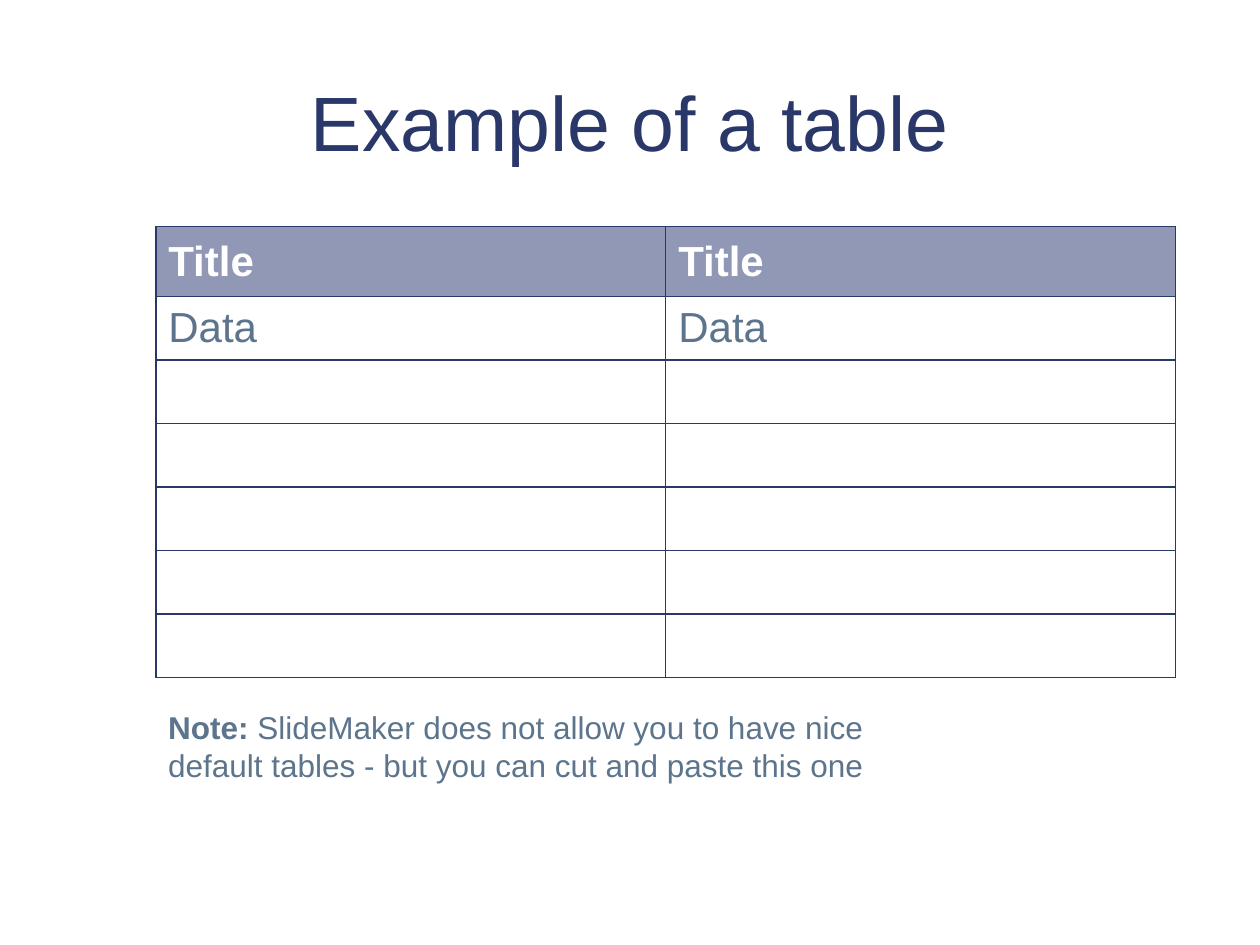
from pptx import Presentation
from pptx.dml.color import RGBColor
from pptx.enum.shapes import MSO_SHAPE
from pptx.enum.text import MSO_ANCHOR, MSO_AUTO_SIZE, PP_ALIGN
from pptx.oxml.ns import qn
from pptx.util import Cm, Pt
from lxml.etree import SubElement

NAVY = RGBColor(0x2A, 0x37, 0x69)
LAVENDER = RGBColor(0x91, 0x98, 0xB5)
SLATE = RGBColor(0x5C, 0x74, 0x8C)
WHITE = RGBColor(0xFF, 0xFF, 0xFF)

ROWS = [["Title", "Title"], ["Data", "Data"]] + [["", ""]] * 5
HEADER_HEIGHT = Cm(1.41)
ROW_HEIGHT = Cm(1.28)
COLUMN_WIDTH = Cm(10.28)
TABLE_LEFT = Cm(3.14)


def format_font(font, size, color, bold=False):
    font.name = "Arial"
    font.size = Pt(size)
    font.bold = bold
    font.color.rgb = color


def add_title(slide, text):
    title = slide.shapes.title
    title.left, title.top, title.width, title.height = Cm(1.27), Cm(0.84), Cm(22.86), Cm(3.18)
    title.text_frame.text = text
    title.text_frame.vertical_anchor = MSO_ANCHOR.MIDDLE
    heading = title.text_frame.paragraphs[0]
    heading.alignment = PP_ALIGN.CENTER
    format_font(heading.runs[0].font, 44, NAVY)


def add_borders(cell):
    properties = cell._tc.get_or_add_tcPr()
    for side in ("lnL", "lnR", "lnT", "lnB"):
        border = SubElement(properties, qn(f"a:{side}"), w=str(Pt(1)))
        fill = SubElement(border, qn("a:solidFill"))
        SubElement(fill, qn("a:srgbClr"), val=str(NAVY))


def format_cell(cell, text, is_header):
    add_borders(cell)
    if is_header:
        cell.fill.solid()
        cell.fill.fore_color.rgb = LAVENDER
    else:
        cell.fill.background()
    cell.vertical_anchor = MSO_ANCHOR.MIDDLE
    cell.text_frame.text = text
    format_font(cell.text_frame.paragraphs[0].font, 24, WHITE if is_header else SLATE, is_header)
    for run in cell.text_frame.paragraphs[0].runs:
        format_font(run.font, 24, WHITE if is_header else SLATE, is_header)


def add_data_table(slide, rows):
    height = HEADER_HEIGHT + ROW_HEIGHT * (len(rows) - 1)
    table = slide.shapes.add_table(
        len(rows), len(rows[0]), TABLE_LEFT, Cm(4.57), COLUMN_WIDTH * len(rows[0]), height
    ).table
    table.first_row = True
    table.horz_banding = False
    for column in table.columns:
        column.width = COLUMN_WIDTH
    for index, texts in enumerate(rows):
        table.rows[index].height = ROW_HEIGHT if index else HEADER_HEIGHT
        for cell, text in zip(table.rows[index].cells, texts):
            format_cell(cell, text, index == 0)


def add_note(slide, label, lines):
    note = slide.shapes.add_shape(MSO_SHAPE.RECTANGLE, TABLE_LEFT, Cm(14.15), Cm(15.42), Cm(1.78))
    note.shadow.inherit = False
    note.line.fill.background()
    note.fill.solid()
    note.fill.fore_color.rgb = WHITE
    tint = note._element.spPr.find(qn("a:solidFill")).find(qn("a:srgbClr"))
    SubElement(tint, qn("a:alpha"), val="60000")

    frame = note.text_frame
    frame.word_wrap = True
    frame.auto_size = MSO_AUTO_SIZE.SHAPE_TO_FIT_TEXT
    frame.vertical_anchor = MSO_ANCHOR.TOP
    paragraph = frame.paragraphs[0]
    paragraph.alignment = PP_ALIGN.LEFT
    paragraph.text = "\v".join([label + lines[0], *lines[1:]])
    paragraph.text = ""
    label_run = paragraph.add_run()
    label_run.text = label
    format_font(label_run.font, 18, SLATE, True)
    for index, line in enumerate(lines):
        if index:
            paragraph.add_line_break()
        line_run = paragraph.add_run()
        line_run.text = line
        format_font(line_run.font, 18, SLATE)


def main():
    presentation = Presentation()
    presentation.slide_width = Cm(25.4)
    presentation.slide_height = Cm(19.05)
    slide = presentation.slides.add_slide(presentation.slide_layouts[5])
    add_title(slide, "Example of a table")
    add_data_table(slide, ROWS)
    add_note(slide, "Note: ", [
        "SlideMaker does not allow you to have nice",
        "default tables - but you can cut and paste this one",
    ])
    presentation.save("out.pptx")


if __name__ == "__main__":
    main()
